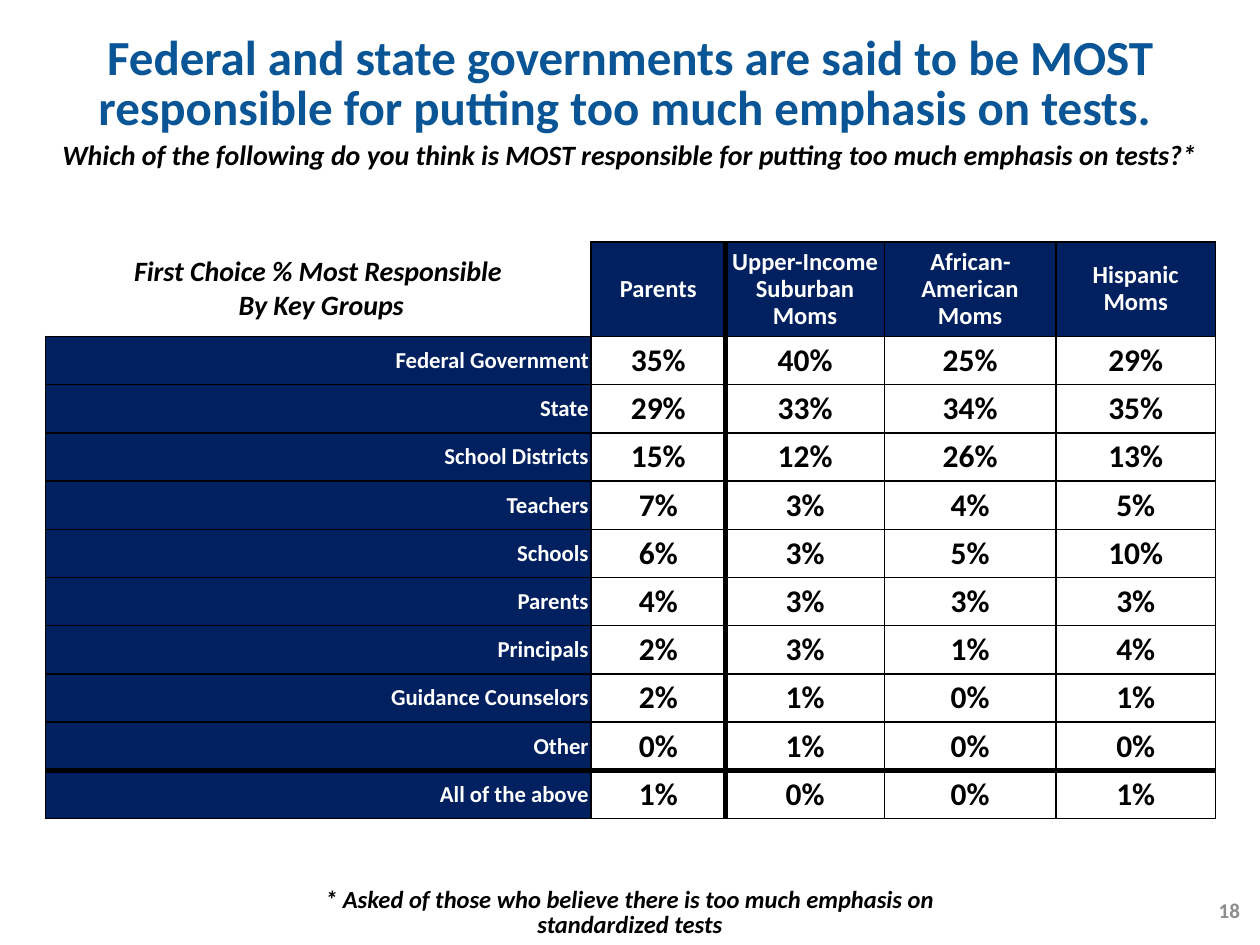
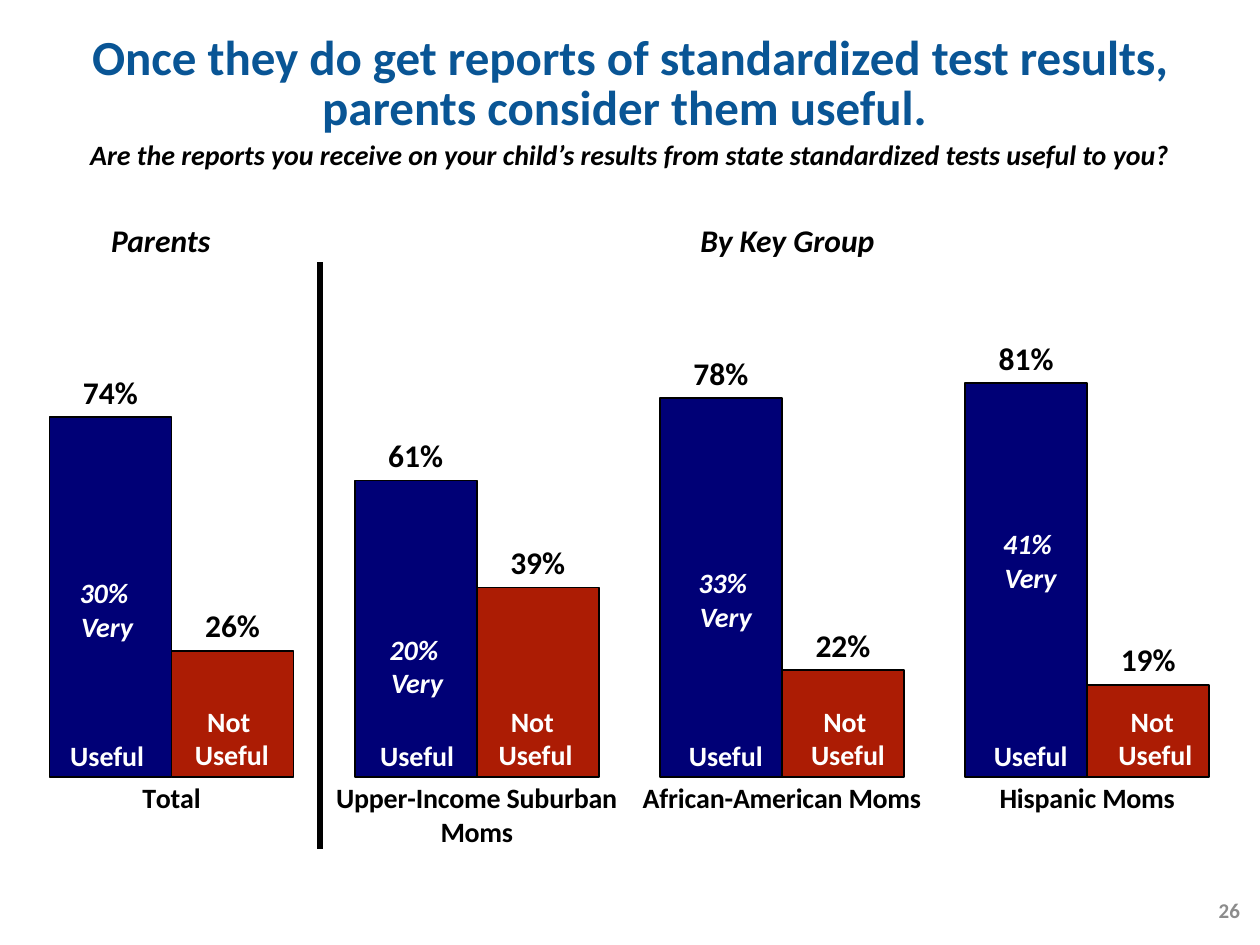
from lxml.etree import SubElement, Element
from pptx import Presentation
from pptx.chart.data import CategoryChartData
from pptx.dml.color import RGBColor as Rgb
from pptx.enum.chart import XL_CHART_TYPE as ChartType
from pptx.enum.chart import XL_LABEL_POSITION as LabelAt
from pptx.enum.chart import XL_TICK_LABEL_POSITION as TickLabels
from pptx.enum.chart import XL_TICK_MARK as Tick
from pptx.enum.shapes import MSO_CONNECTOR as Connector
from pptx.enum.text import MSO_ANCHOR as Anchor
from pptx.enum.text import MSO_AUTO_SIZE as AutoSize
from pptx.enum.text import PP_ALIGN as Align
from pptx.oxml.ns import qn
from pptx.util import Emu, Pt

FONT = "Calibri"
COLORS = {
    "title": "095595",
    "ink": "000000",
    "paper": "FFFFFF",
    "navy": "002060",
    "useful": "000076",
    "not_useful": "AC1C04",
    "page": "8C8C8C",
}
TITLE_ONLY = 5


def px(length):
    return Emu(round(length * 9144))


def rgb(name):
    return Rgb.from_string(COLORS[name])


def style_font(font, size, color="ink", bold=True, italic=False):
    font.name, font.size = FONT, Pt(size)
    font.bold, font.italic = bold, italic
    font.color.rgb = rgb(color)


def write(frame, text, size=16, color="ink", italic=False, align=Align.CENTER,
          spacing=None, anchor=Anchor.TOP):
    frame.word_wrap = True
    frame.vertical_anchor = anchor
    for index, line in enumerate(text.split("\n")):
        paragraph = frame.add_paragraph() if index else frame.paragraphs[0]
        paragraph.alignment = align
        if spacing:
            paragraph.line_spacing = spacing
        run = paragraph.add_run()
        run.text = line
        style_font(run.font, size, color, italic=italic)


def set_borders(cell, widths):
    properties = cell._tc.get_or_add_tcPr()
    for position, (side, width) in enumerate(zip("LRTB", widths)):
        border = Element(qn(f"a:ln{side}"), w=str(Pt(width)))
        if width:
            fill = SubElement(border, qn("a:solidFill"))
            SubElement(fill, qn("a:srgbClr"), val=COLORS["ink"])
        else:
            SubElement(border, qn("a:noFill"))
        properties.insert(position, border)


class Deck:
    def __init__(self):
        self.show = Presentation()
        self.show.slide_width, self.show.slide_height = px(1000), px(750)
        self.slide = None

    def new_slide(self):
        self.slide = self.show.slides.add_slide(self.show.slide_layouts[TITLE_ONLY])

    def heading(self, headline, question, page):
        title = self.slide.shapes.title
        title.left, title.top, title.width, title.height = map(px, (50, 23, 900, 125))
        title.text_frame.auto_size = AutoSize.NONE
        write(title.text_frame, headline, size=28, color="title", spacing=0.85)
        self.slide.shapes.element.append(title.element)
        self.text(question, 0, 108, 1000, 33, italic=True, spacing=0.85)
        self.text(page, 761, 702, 233, 40, size=12, color="page",
                  align=Align.RIGHT, anchor=Anchor.MIDDLE)

    def text(self, text, left, top, width, height, **look):
        box = self.slide.shapes.add_textbox(*map(px, (left, top, width, height)))
        write(box.text_frame, text, **look)

    def divider(self, x, top, bottom):
        line = self.slide.shapes.add_connector(
            Connector.STRAIGHT, px(x), px(top), px(x), px(bottom))
        line.line.color.rgb = rgb("ink")
        line.line.width = Pt(3)
        SubElement(line._element.spPr, qn("a:effectLst"))

    def table(self, rows, left, top, height, columns, header_height):
        last = len(rows) - 1
        table = self.slide.shapes.add_table(
            len(rows), len(columns), *map(px, (left, top, sum(columns), height))).table
        table.first_row = table.horz_banding = False
        for column, width in zip(table.columns, columns):
            column.width = px(width)
        for row in table.rows:
            row.height = px((height - header_height) / last)
        table.rows[0].height = px(header_height)
        for r, row in enumerate(rows):
            for c, text in enumerate(row):
                cell = table.cell(r, c)
                cell.margin_left = cell.margin_right = px(2)
                cell.margin_top = cell.margin_bottom = px(2)
                corner = r == c == 0
                if corner:
                    look = dict(size=16, italic=True)
                elif r == 0:
                    look = dict(size=14, color="paper", spacing=0.9)
                elif c == 0:
                    look = dict(size=13, color="paper", align=Align.RIGHT, spacing=0.95)
                else:
                    look = dict(size=18)
                write(cell.text_frame, text, **look)
                cell.vertical_anchor = Anchor.MIDDLE
                if (r == 0 or c == 0) and not corner:
                    cell.fill.solid()
                    cell.fill.fore_color.rgb = rgb("navy")
                else:
                    cell.fill.background()
                outer = 0 if corner else 1
                set_borders(cell, (3 if c == 2 else outer, 3 if c == 1 else 1,
                                   3 if r == last else outer, 3 if r == last - 1 else 1))

    def columns(self, categories, series, box, plot):
        data = CategoryChartData(number_format="0%")
        data.categories = categories
        for name, values, _ in series:
            data.add_series(name, values)
        chart = self.slide.shapes.add_chart(
            ChartType.COLUMN_CLUSTERED, *map(px, box), data).chart
        chart.has_legend = chart.has_title = False
        style_font(chart.font, 18, bold=False)

        groups = chart.category_axis
        groups.major_tick_mark = groups.minor_tick_mark = Tick.NONE
        groups.format.line.fill.background()
        style_font(groups.tick_labels.font, 16)

        shares = chart.value_axis
        shares.minimum_scale, shares.maximum_scale, shares.major_unit = 0, 1.05, 0.1
        shares.has_major_gridlines = False
        shares.major_tick_mark = shares.minor_tick_mark = Tick.NONE
        shares.tick_label_position = TickLabels.NONE
        shares.format.line.fill.background()

        bars = chart.plots[0]
        bars.gap_width, bars.overlap, bars.vary_by_categories = 50, 0, False
        for answer, (_, _, color) in zip(bars.series, series):
            answer.invert_if_negative = False
            answer.format.fill.solid()
            answer.format.fill.fore_color.rgb = rgb(color)
            answer.format.line.color.rgb = rgb("ink")
            answer.format.line.width = Pt(1)
            labels = answer.data_labels
            labels.show_value = True
            labels.number_format, labels.number_format_is_linked = "0%", False
            labels.position = LabelAt.OUTSIDE_END
            style_font(labels.font, 18)
        self.place_plot(chart, plot)

    def place_plot(self, chart, plot):
        area = chart._chartSpace.chart.plotArea
        for old in area.findall(qn("c:layout")):
            area.remove(old)
        layout = Element(qn("c:layout"))
        manual = SubElement(layout, qn("c:manualLayout"))
        settings = [("layoutTarget", "inner"), ("xMode", "edge"), ("yMode", "edge"),
                    *zip("xywh", plot)]
        for tag, value in settings:
            SubElement(manual, qn(f"c:{tag}"), val=str(value))
        area.insert(0, layout)


def responsibility_slide(deck):
    header = ("First Choice % Most Responsible\n By Key Groups", "Parents",
              "Upper-Income Suburban\nMoms", "African-American\nMoms", "Hispanic\nMoms")
    shares = {
        "Federal Government": (35, 40, 25, 29),
        "State": (29, 33, 34, 35),
        "School Districts": (15, 12, 26, 13),
        "Teachers": (7, 3, 4, 5),
        "Schools": (6, 3, 5, 10),
        "Parents": (4, 3, 3, 3),
        "Principals": (2, 3, 1, 4),
        "Guidance Counselors": (2, 1, 0, 1),
        "Other": (0, 1, 0, 0),
        "All of the above": (1, 0, 0, 1),
    }
    rows = [header] + [(who, *(f"{share}%" for share in row)) for who, row in shares.items()]
    deck.new_slide()
    deck.table(rows, left=36, top=192, height=458,
               columns=(433, 107, 126, 136, 127), header_height=75)
    deck.heading(
        "Federal and state governments are said to be MOST responsible for putting "
        "too much emphasis on tests. ",
        "Which of the following do you think is MOST responsible for putting "
        "too much emphasis on tests?*", "18")
    deck.text("* Asked of those who believe there is too much emphasis on standardized tests",
              200, 700, 600, 50, size=14, italic=True, spacing=0.85)


def usefulness_slide(deck):
    deck.new_slide()
    deck.columns(
        ("Total", "Upper-Income Suburban Moms", "African-American Moms", "Hispanic Moms"),
        (("Useful", (0.74, 0.61, 0.78, 0.81), "useful"),
         ("Not Useful", (0.26, 0.39, 0.22, 0.19), "not_useful")),
        box=(0, 0, 1000, 730), plot=(0.015, 0.29, 0.969, 0.555))
    deck.heading(
        "Once they do get reports of standardized test results, "
        "parents consider them useful. ",
        "Are the reports you receive on your child’s results from state "
        "standardized tests useful to you?", "26")
    for section, left, width in (("Parents", 0, 255), ("By Key Group", 250, 750)):
        deck.text(section, left, 175, width, 36, size=18, italic=True, spacing=0.85)
    bar_notes = ((19, 118, "30%", 452), (265, 359, "20%", 497),
                 (510, 607, "33%", 444), (752, 851, "41%", 413))
    for useful_left, not_left, very, very_top in bar_notes:
        deck.text("Useful", useful_left, 581, 132, 37, color="paper")
        deck.text(f"{very} \nVery", useful_left - 3, very_top, 138, 64,
                  color="paper", italic=True)
        deck.text("Not \nUseful", not_left, 554, 132, 64, color="paper")
    deck.divider(254, 208, 674)


def main():
    deck = Deck()
    responsibility_slide(deck)
    usefulness_slide(deck)
    deck.show.save("out.pptx")


if __name__ == "__main__":
    main()
